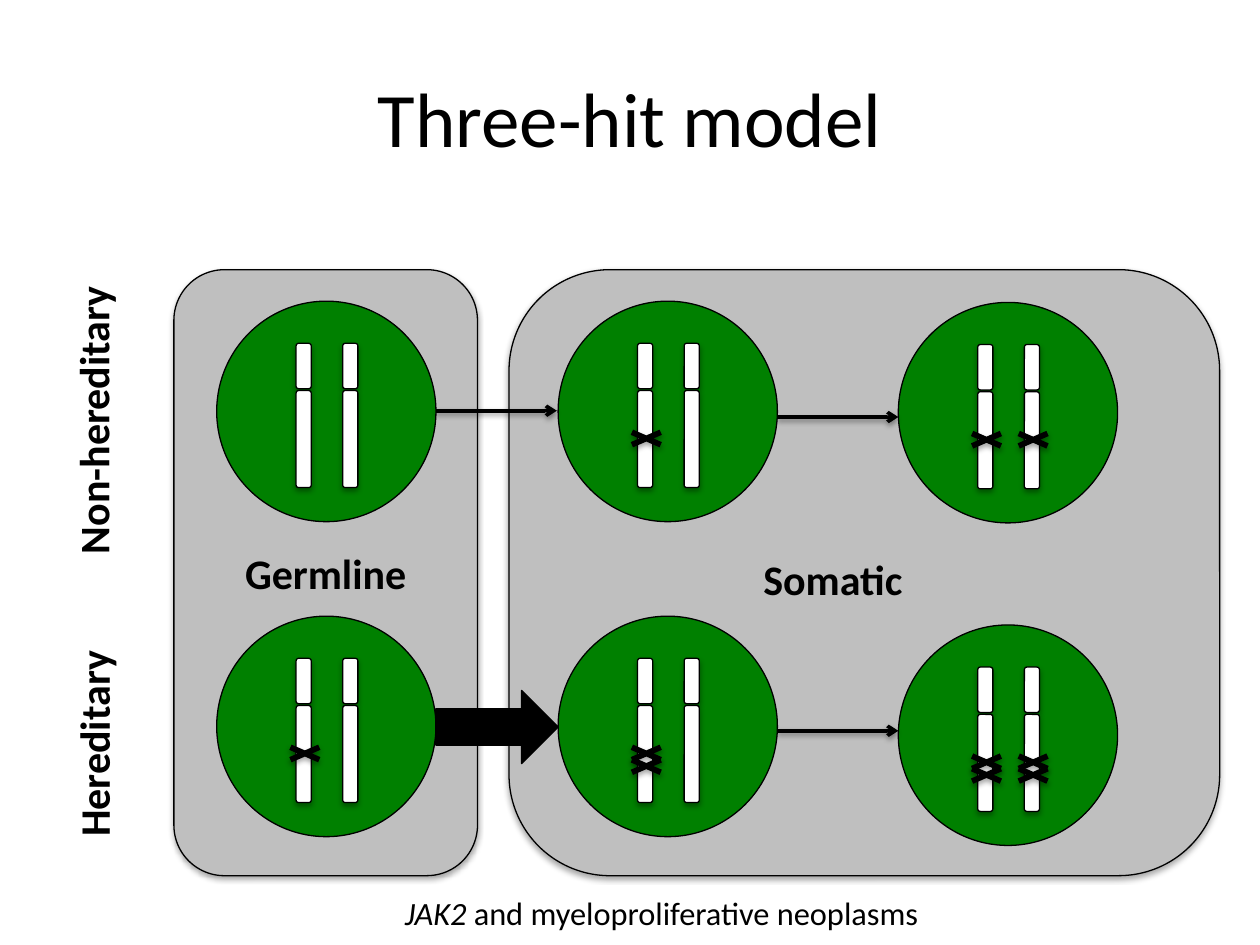
from lxml.etree import SubElement
from pptx import Presentation
from pptx.dml.color import RGBColor
from pptx.enum.shapes import MSO_CONNECTOR, MSO_SHAPE as Shape
from pptx.enum.text import MSO_ANCHOR as Anchor, PP_ALIGN as Align
from pptx.oxml.ns import qn
from pptx.util import Inches, Pt

COLORS = {"ink": "000000", "panel": "BFBFBF", "cell": "008000", "chromosome": "FFFFFF"}
COLUMNS, ROWS = 100, 75
BOLD = {"size": Pt(24), "bold": True}


class Diagram:
    """Holds the style and the current slide; lengths are grid columns and rows."""

    font = "Calibri"

    def __init__(self, deck):
        self.column = deck.slide_width / COLUMNS
        self.row = deck.slide_height / ROWS
        self.slide = deck.slides.add_slide(deck.slide_layouts[5])

    def place(self, left, top, width, height):
        return (round(left * self.column), round(top * self.row),
                round(width * self.column), round(height * self.row))

    def color(self, name):
        return RGBColor.from_string(COLORS[name])

    def shadow(self, part, opacity=35, distance=1.8):
        effects = SubElement(part._element.spPr, qn("a:effectLst"))
        outer = SubElement(effects, qn("a:outerShdw"), blurRad=str(Pt(3.1)),
                           dist=str(Pt(distance)), dir="5400000", rotWithShape="0")
        ink = SubElement(outer, qn("a:srgbClr"), val=COLORS["ink"])
        SubElement(ink, qn("a:alpha"), val=str(opacity * 1000))

    def fill_text(self, frame, runs, align=Align.LEFT, anchor=Anchor.TOP):
        frame.vertical_anchor = anchor
        paragraph = frame.paragraphs[0]
        paragraph.alignment = align
        for words, style in runs:
            run = paragraph.add_run()
            run.text = words
            run.font.color.rgb = self.color("ink")
            for name, value in {"name": self.font, **style}.items():
                setattr(run.font, name, value)

    def title(self, words, *box):
        heading = self.slide.shapes.title
        for name, value in zip(("left", "top", "width", "height"), self.place(*box)):
            setattr(heading, name, value)
        self.fill_text(heading.text_frame, [(words, {"size": Pt(44)})],
                       Align.CENTER, Anchor.MIDDLE)

    def label(self, runs, *box, align=Align.LEFT, wrap=False, rotation=0):
        text = self.slide.shapes.add_textbox(*self.place(*box))
        text.rotation = rotation
        text.text_frame.word_wrap = wrap
        self.fill_text(text.text_frame, runs, align)

    def shape(self, kind, fill, *box, outline=True, shadow=True):
        part = self.slide.shapes.add_shape(kind, *self.place(*box))
        part.fill.solid()
        part.fill.fore_color.rgb = self.color(fill)
        if outline:
            part.line.color.rgb = self.color("ink")
            part.line.width = Pt(0.75)
        else:
            part.line.fill.background()
        if shadow:
            self.shadow(part)
        else:
            part.shadow.inherit = False
        return part

    def arrow(self, start, end, level):
        x1, y, x2, _ = self.place(start, level, end, 0)
        step = self.slide.shapes.add_connector(MSO_CONNECTOR.STRAIGHT, x1, y, x2, y)
        step.line.color.rgb = self.color("ink")
        step.line.width = Pt(2)
        SubElement(step._element.spPr.find(qn("a:ln")), qn("a:tailEnd"), type="arrow")
        self.shadow(step, opacity=38, distance=1.6)

    def cell(self, left, top, hits):
        """Draw a cell; hits gives the number of mutations per chromosome."""
        self.shape(Shape.OVAL, "cell", left, top, 17.4, 17.5, shadow=False)
        for index, count in enumerate(hits):
            x = left + 6.3 + 3.7 * index
            for arm_top, arm_height in ((3.35, 3.6), (7.1, 7.7)):
                self.shape(Shape.ROUNDED_RECTANGLE, "chromosome",
                           x, top + arm_top, 1.2, arm_height)
            for hit in range(count):
                self.shape(Shape.MATH_MULTIPLY, "ink", x - 1.5, top + 9.95 + hit,
                           4.4, 1.9, outline=False)


def main():
    deck = Presentation()
    deck.slide_width, deck.slide_height = Inches(10), Inches(7.5)
    model = Diagram(deck)
    model.title("Three-hit model", 5, 3, 90, 12.5)

    # Panels for the two tissue types
    model.shape(Shape.ROUNDED_RECTANGLE, "panel", 40.4, 21.4, 56.4, 48.1)
    germline = model.shape(Shape.ROUNDED_RECTANGLE, "panel", 13.8, 21.4, 24.1, 48.1)
    model.fill_text(germline.text_frame, [("Germline", BOLD)],
                    Align.CENTER, Anchor.MIDDLE)
    model.label([("Somatic", BOLD)], 59.6, 43.4, 13.2, 5)

    # Row labels
    model.label([("Non-hereditary", BOLD)], -4.4, 30.7, 23.5, 5, rotation=270)
    model.label([("Hereditary", BOLD)], -1.1, 56.4, 17, 5, rotation=270)

    # Cells: left, top, hits per chromosome
    cells = [
        (17.2, 23.9, (0, 0)), (44.3, 23.9, (1, 0)), (71.3, 24, (1, 1)),
        (17.2, 48.9, (1, 0)), (44.3, 48.9, (2, 0)), (71.3, 49.6, (2, 2)),
    ]
    for left, top, hits in cells:
        model.cell(left, top, hits)

    # Steps between cells
    for start, end, level in ((34.6, 44.2, 32.6), (61.7, 71.3, 33.1), (61.7, 71.3, 58)):
        model.arrow(start, end, level)
    model.shape(Shape.RIGHT_ARROW, "ink", 34.6, 54.8, 9.7, 5.8, shadow=False)

    # Example
    example = {"size": Pt(18.5)}
    model.label([("JAK2 ", {**example, "italic": True}),
                 ("and myeloproliferative neoplasms", example)],
                5, 70.4, 95, 3.9, align=Align.CENTER, wrap=True)

    deck.save("out.pptx")


if __name__ == "__main__":
    main()
